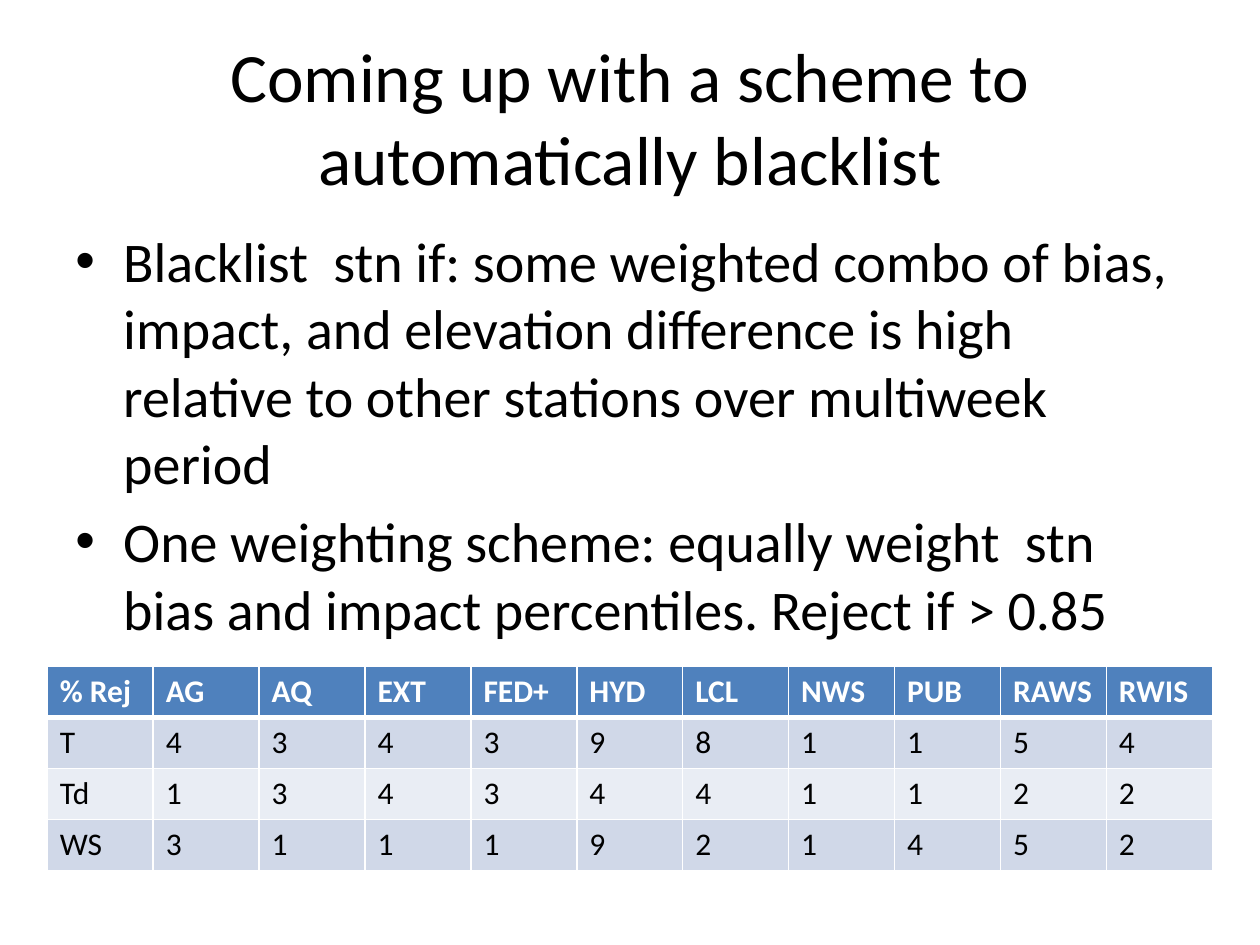
from lxml.etree import SubElement
from pptx import Presentation
from pptx.dml.color import RGBColor
from pptx.enum.text import MSO_ANCHOR as Anchor, PP_ALIGN as Align
from pptx.oxml.ns import qn
from pptx.util import Inches, Pt

COLUMNS, ROWS = 80, 60

TITLE = "Coming up with a scheme to automatically blacklist"
CRITERIA = [
    "Blacklist  stn if: some weighted combo of bias, impact, and elevation "
    "difference is high relative to other stations over multiweek period",
    "One weighting scheme: equally weight  stn bias and impact percentiles. "
    "Reject if > 0.85",
]
REJECTION_RATES = [
    ["% Rej", "AG", "AQ", "EXT", "FED+", "HYD", "LCL", "NWS", "PUB", "RAWS", "RWIS"],
    ["T", 4, 3, 4, 3, 9, 8, 1, 1, 5, 4],
    ["Td", 1, 3, 4, 3, 4, 4, 1, 1, 2, 2],
    ["WS", 3, 1, 1, 1, 9, 2, 1, 4, 5, 2],
]


def color(hex_string):
    return RGBColor.from_string(hex_string)


class SlideBuilder:
    FONT = "Calibri"
    TEXT, LIGHT = "000000", "FFFFFF"
    HEADER, BANDS = "4F81BD", ("E9EDF4", "D0D8E8")
    TITLE_FORMAT = {"size": Pt(39.6)}
    BODY_FORMAT = {"size": Pt(32)}
    CELL_FORMAT = {"size": Pt(18), "bold": False}
    HEADER_FORMAT = {"size": Pt(18), "bold": True}

    def __init__(self, deck):
        self.column = deck.slide_width / COLUMNS
        self.row = deck.slide_height / ROWS
        self.slide = deck.slides.add_slide(deck.slide_layouts[6])

    def place(self, left, top, width, height):
        """Turn grid columns and rows into slide lengths."""
        return [int(left * self.column), int(top * self.row),
                int(width * self.column), int(height * self.row)]

    def style(self, paragraph, formats, hex_string=TEXT):
        font = paragraph.font
        for name, value in {"name": self.FONT, **formats}.items():
            setattr(font, name, value)
        font.color.rgb = color(hex_string)

    def text_frame(self, area, anchor):
        frame = self.slide.shapes.add_textbox(*self.place(*area)).text_frame
        frame.word_wrap = True
        frame.vertical_anchor = anchor
        return frame

    def title(self, text, area):
        frame = self.text_frame(area, Anchor.MIDDLE)
        frame.text = text
        heading = frame.paragraphs[0]
        heading.alignment = Align.CENTER
        self.style(heading, self.TITLE_FORMAT)

    def bullets(self, items, area):
        frame = self.text_frame(area, Anchor.TOP)
        frame.text = "\n".join(items)
        indent = Inches(0.38)
        for index, item in enumerate(frame.paragraphs):
            if index:
                item.space_before = Pt(6.4)
            properties = item._p.get_or_add_pPr()
            properties.set("marL", str(indent))
            properties.set("indent", str(-indent))
            SubElement(properties, qn("a:buFont"), typeface="Arial")
            SubElement(properties, qn("a:buChar"), char="•")
            self.style(item, self.BODY_FORMAT)

    def borders(self, cell, **widths):
        """Draw cell borders; the sides L, R, T and B are 1 pt unless given."""
        properties = cell._tc.get_or_add_tcPr()
        for side in "LRTB":
            line = SubElement(properties, qn(f"a:ln{side}"),
                              w=str(Pt(widths.get(side, 1))))
            fill = SubElement(line, qn("a:solidFill"))
            SubElement(fill, qn("a:srgbClr"), val=self.LIGHT)

    def table(self, records, area):
        table = self.slide.shapes.add_table(
            len(records), len(records[0]), *self.place(*area)).table
        for row, record in enumerate(records):
            for column, value in enumerate(record):
                cell = table.cell(row, column)
                cell.text = str(value)
                self.borders(cell, **{0: {"B": 3}, 1: {"T": 3}}.get(row, {}))
                cell.fill.solid()
                cell.fill.fore_color.rgb = color(
                    self.BANDS[row % 2] if row else self.HEADER)
                self.style(cell.text_frame.paragraphs[0],
                           self.CELL_FORMAT if row else self.HEADER_FORMAT,
                           self.TEXT if row else self.LIGHT)


def main():
    deck = Presentation()
    deck.slide_width, deck.slide_height = Inches(10), Inches(7.5)
    builder = SlideBuilder(deck)
    builder.title(TITLE, (4, 2.4, 72, 10))
    builder.bullets(CRITERIA, (4, 14, 72, 39.6))
    builder.table(REJECTION_RATES, (3, 42.3, 74, 13))
    deck.save("out.pptx")


if __name__ == "__main__":
    main()
